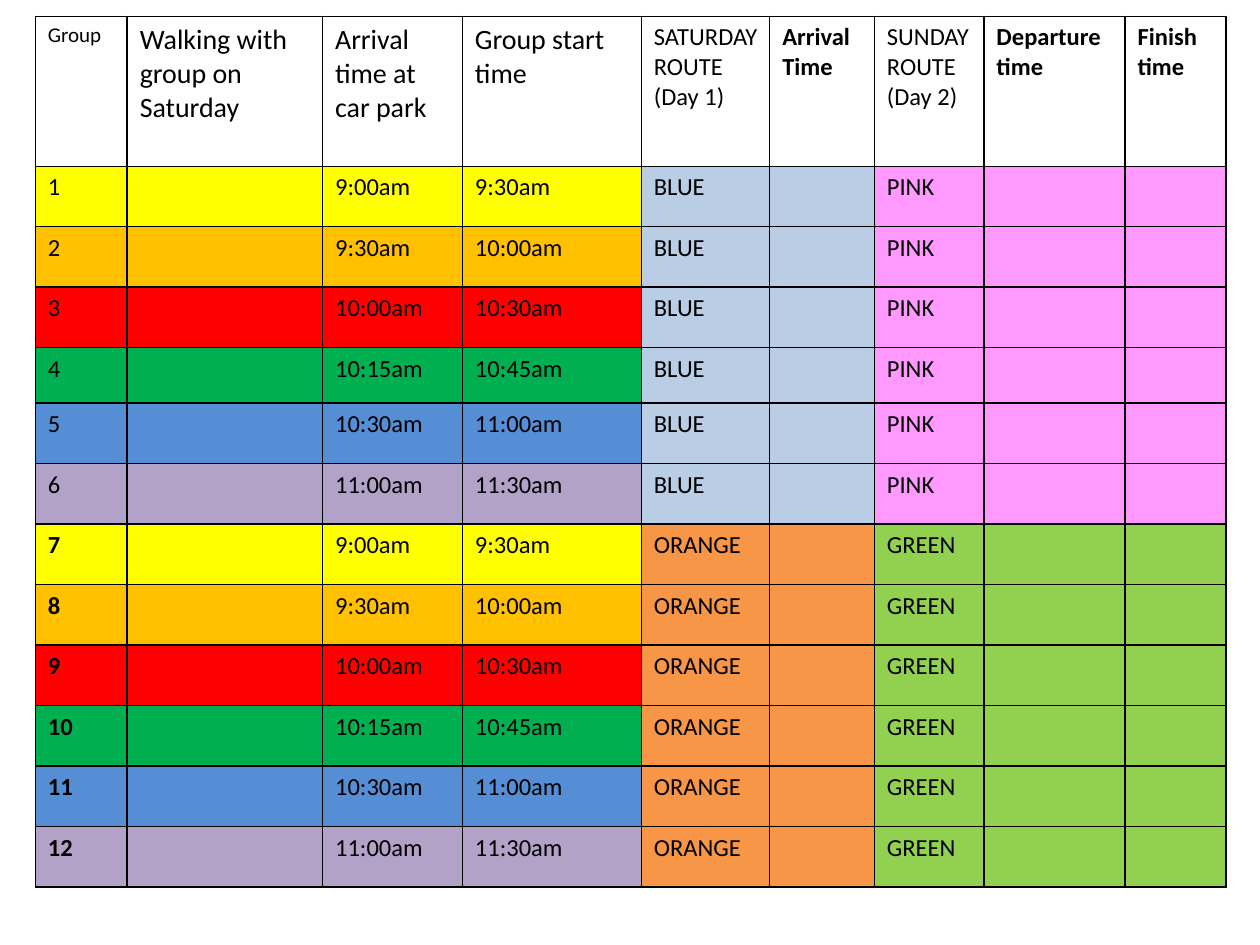
import pptx
import pptx.dml.color
import pptx.oxml
import pptx.oxml.ns
import pptx.util
from pptx.util import Inches


def color(value):
    return pptx.dml.color.RGBColor.from_string(value)


def add_border(cell, side):
    cell._tc.get_or_add_tcPr().append(pptx.oxml.parse_xml(
        f'<a:{side} {pptx.oxml.ns.nsdecls("a")} w="12700">'
        f'<a:solidFill><a:srgbClr val="000000"/></a:solidFill></a:{side}>'))


headings = [
    ("Group", 12, False),
    ("Walking with group on Saturday", 16, False),
    ("Arrival time at car park", 16, False),
    ("Group start time", 16, False),
    ("SATURDAY\nROUTE\n(Day 1)", 14, False),
    ("Arrival Time", 14, True),
    ("SUNDAY\nROUTE\n(Day 2)", 14, False),
    ("Departure time", 14, True),
    ("Finish time", 14, True),
]
start_slots = [
    ("9:00am", "9:30am", "FFFF00"),
    ("9:30am", "10:00am", "FFC000"),
    ("10:00am", "10:30am", "FF0000"),
    ("10:15am", "10:45am", "00B050"),
    ("10:30am", "11:00am", "558ED5"),
    ("11:00am", "11:30am", "B3A2C7"),
]
route_pairs = [
    ("BLUE", "B9CDE5", "PINK", "FF99FF", False),
    ("ORANGE", "F79646", "GREEN", "92D050", True),
]

rows = [[(text, size, bold, None) for text, size, bold in headings]]
for saturday, saturday_fill, sunday, sunday_fill, bold_group in route_pairs:
    for arrival, start, slot_fill in start_slots:
        texts = [str(len(rows)), "", arrival, start, saturday, "", sunday, "", ""]
        fills = [slot_fill] * 4 + [saturday_fill] * 2 + [sunday_fill] * 3
        bolds = [bold_group] + [False] * 8
        rows.append([(text, 14, bold, fill)
                     for text, bold, fill in zip(texts, bolds, fills)])

column_widths = [0.73, 1.55, 1.11, 1.42, 1.02, 0.83, 0.87, 1.12, 0.8]
row_heights = [1.19] + [0.48] * 3 + [0.44] + [0.48] * 8

presentation = pptx.Presentation()
presentation.slide_width = Inches(10)
presentation.slide_height = Inches(7.5)
slide = presentation.slides.add_slide(presentation.slide_layouts[6])

schedule = slide.shapes.add_table(
    len(rows), len(headings), Inches(0.28), Inches(0.13),
    Inches(sum(column_widths)), Inches(sum(row_heights))).table
schedule.first_row = False
schedule.horz_banding = False
for column, width in zip(schedule.columns, column_widths):
    column.width = Inches(width)
for row, height in zip(schedule.rows, row_heights):
    row.height = Inches(height)

for row, entries in zip(schedule.rows, rows):
    for cell, (text, size, bold, fill) in zip(row.cells, entries):
        for side in ("lnL", "lnR", "lnT", "lnB"):
            add_border(cell, side)
        if fill:
            cell.fill.solid()
            cell.fill.fore_color.rgb = color(fill)
        else:
            cell.fill.background()
        cell.text = text
        font_format = {"name": "Calibri", "size": pptx.util.Pt(size), "bold": bold}
        for paragraph in cell.text_frame.paragraphs:
            for run in paragraph.runs:
                for attribute, value in font_format.items():
                    setattr(run.font, attribute, value)
                run.font.color.rgb = color("000000")

saturday_heading = schedule.cell(0, 4)
saturday_heading.margin_right = Inches(0.05)

presentation.save("out.pptx")
